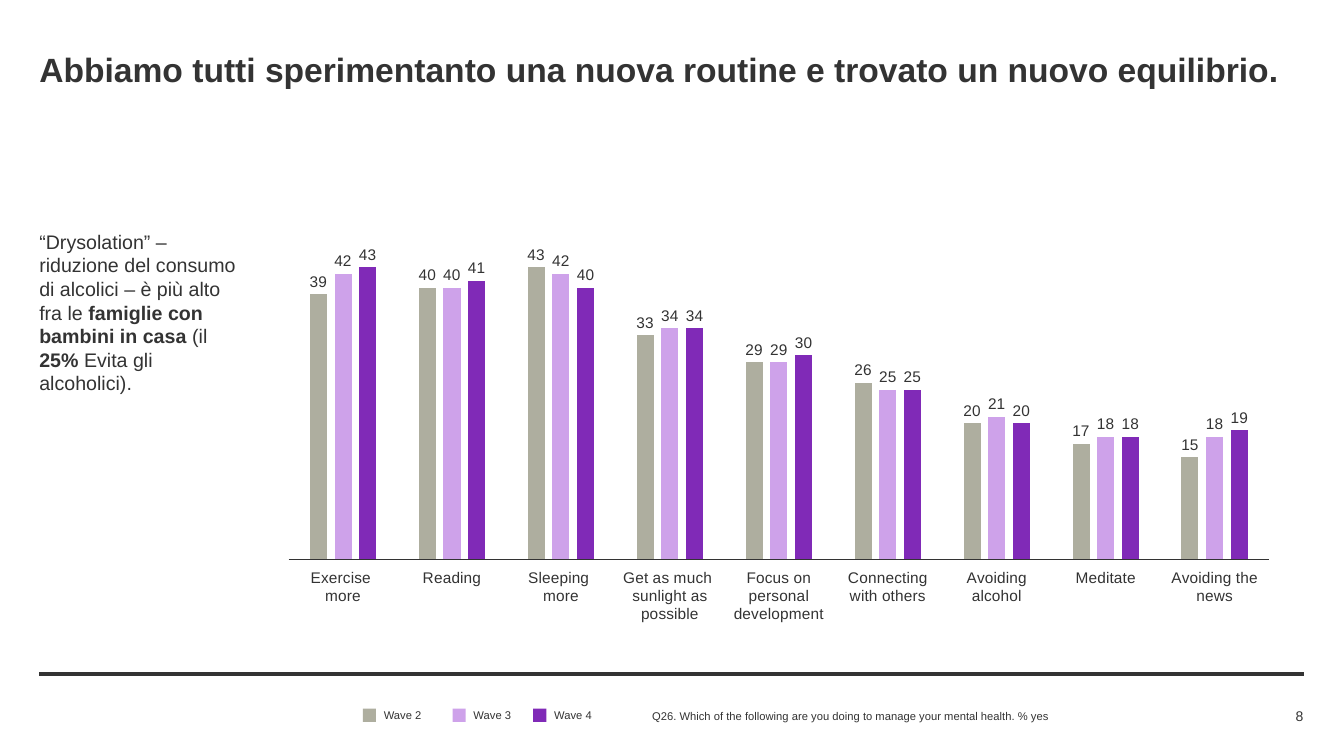
from lxml import etree
from pptx import Presentation
from pptx.chart.data import CategoryChartData
from pptx.dml.color import RGBColor
from pptx.enum.chart import XL_CHART_TYPE, XL_LABEL_POSITION, XL_TICK_LABEL_POSITION, XL_TICK_MARK
from pptx.enum.shapes import MSO_CONNECTOR, MSO_SHAPE
from pptx.enum.text import MSO_ANCHOR, PP_ALIGN
from pptx.oxml.ns import qn
from pptx.util import Pt

CLUSTERED = XL_CHART_TYPE.COLUMN_CLUSTERED
OUTSIDE_END = XL_LABEL_POSITION.OUTSIDE_END
LABELS_LOW = XL_TICK_LABEL_POSITION.LOW
NO_TICK = XL_TICK_MARK.NONE
STRAIGHT = MSO_CONNECTOR.STRAIGHT
RECTANGLE = MSO_SHAPE.RECTANGLE
TOP, MIDDLE = MSO_ANCHOR.TOP, MSO_ANCHOR.MIDDLE
LEFT, RIGHT = PP_ALIGN.LEFT, PP_ALIGN.RIGHT

FONT = "Arial"
INK = RGBColor(0x33, 0x33, 0x33)
SAGE = RGBColor(0xAE, 0xAE, 0x9F)
LILAC = RGBColor(0xCE, 0xA2, 0xEA)
VIOLET = RGBColor(0x80, 0x2A, 0xB7)

# Content
TITLE = "Abbiamo tutti sperimentanto una nuova routine e trovato un nuovo equilibrio."
COMMENT = [  # text, bold
    ("“Drysolation” – riduzione del consumo di alcolici – è più alto fra le ", False),
    ("famiglie con bambini in casa ", True),
    ("(il ", False),
    ("25%", True),
    (" Evita gli alcoholici).", False),
]
QUESTION = "Q26. Which of the following are you doing to manage your mental health. % yes"
PAGE = "8"
ACTIVITIES = [
    "Exercise \nmore", "Reading", "Sleeping \nmore",
    "Get as much \nsunlight as possible", "Focus on personal development",
    "Connecting with others", "Avoiding alcohol", "Meditate", "Avoiding the news",
]
WAVES = [  # name, colour, legend left, percentages
    ("Wave 2", SAGE, 259.2, (39, 40, 43, 33, 29, 26, 20, 17, 15)),
    ("Wave 3", LILAC, 323.3, (42, 40, 42, 34, 29, 25, 21, 18, 18)),
    ("Wave 4", VIOLET, 380.9, (43, 41, 40, 34, 30, 25, 20, 18, 19)),
]

# Layout in points
MARGIN, RIGHT_EDGE = 28.1, 931.7
RULE_Y = 481.7
CHART_BOX = (195.1, 118.1, 735.8, 352.8)
PLOT = {"x": 0.015, "y": 0.11, "w": 0.952, "h": 0.688}
FOOTER_Y, FOOTER_H = 503.3, 15.8
KEY_Y, KEY_SIZE, KEY_STEP = 506.2, 9.4, 14.9


def style(font, size, bold=False):
    for attribute, value in {"name": FONT, "size": Pt(size), "bold": bold}.items():
        setattr(font, attribute, value)
    font.color.rgb = INK


def add_text(slide, box, runs, size, anchor=TOP, align=LEFT):
    frame = slide.shapes.add_textbox(*map(Pt, box)).text_frame
    settings = {
        "word_wrap": True, "vertical_anchor": anchor,
        "margin_left": 0, "margin_top": 0, "margin_right": 0, "margin_bottom": 0,
    }
    for attribute, value in settings.items():
        setattr(frame, attribute, value)
    paragraph = frame.paragraphs[0]
    paragraph.alignment = align
    for text, bold in runs:
        run = paragraph.add_run()
        run.text = text
        style(run.font, size, bold)


def fix_plot_area(chart):
    area = chart._chartSpace.chart.plotArea
    for previous in area.findall(qn("c:layout")):
        area.remove(previous)
    layout = etree.Element(qn("c:layout"))
    manual = etree.SubElement(layout, qn("c:manualLayout"))
    values = {"layoutTarget": "inner", "xMode": "edge", "yMode": "edge", **PLOT}
    for tag, value in values.items():
        etree.SubElement(manual, qn("c:" + tag)).set("val", str(value))
    area.insert(0, layout)


def add_activity_chart(slide):
    data = CategoryChartData()
    data.categories = ACTIVITIES
    for name, _, _, percentages in WAVES:
        data.add_series(name, percentages)
    chart = slide.shapes.add_chart(CLUSTERED, *map(Pt, CHART_BOX), data).chart
    chart.has_legend = chart.has_title = False
    style(chart.font, 12)
    fix_plot_area(chart)

    plot = chart.plots[0]
    plot.vary_by_categories = False
    plot.gap_width, plot.overlap = 250, -45
    for series, (_, color, _, _) in zip(plot.series, WAVES):
        series.format.fill.solid()
        series.format.fill.fore_color.rgb = color
        labels = series.data_labels
        labels.show_value = True
        labels.position = OUTSIDE_END
        style(labels.font, 11)

    percent_axis = chart.value_axis
    percent_axis.minimum_scale, percent_axis.maximum_scale = 0, 50
    percent_axis.has_major_gridlines = percent_axis.visible = False

    activity_axis = chart.category_axis
    activity_axis.major_tick_mark = activity_axis.minor_tick_mark = NO_TICK
    activity_axis.tick_label_position = LABELS_LOW
    activity_axis.format.line.color.rgb = INK
    activity_axis.format.line.width = Pt(0.75)
    style(activity_axis.tick_labels.font, 11)


def main():
    deck = Presentation()
    deck.slide_width, deck.slide_height = Pt(960), Pt(540)
    slide = deck.slides.add_slide(deck.slide_layouts[6])

    # Footer rule
    rule = slide.shapes.add_connector(
        STRAIGHT, Pt(MARGIN), Pt(RULE_Y), Pt(RIGHT_EDGE), Pt(RULE_Y))
    rule.line.color.rgb = INK
    rule.line.width = Pt(3)
    etree.SubElement(rule._element.spPr, qn("a:effectLst"))

    # Title, chart and comment
    add_text(slide, (MARGIN, 34.6, RIGHT_EDGE - MARGIN, 31.7), [(TITLE, True)], 24)
    add_activity_chart(slide)
    add_text(slide, (MARGIN, 164.2, 144, 240.5), COMMENT, 14)

    # Legend
    for name, color, left, _ in WAVES:
        key = slide.shapes.add_shape(
            RECTANGLE, Pt(left), Pt(KEY_Y), Pt(KEY_SIZE), Pt(KEY_SIZE))
        key.shadow.inherit = False
        key.fill.solid()
        key.fill.fore_color.rgb = color
        key.line.fill.background()
        add_text(slide, (left + KEY_STEP, KEY_Y, 40, KEY_SIZE), [(name, False)], 8)

    # Question and page number
    add_text(slide, (465.8, FOOTER_Y, 381.6, FOOTER_H), [(QUESTION, False)], 8, MIDDLE)
    add_text(slide, (854.6, FOOTER_Y, 76.3, FOOTER_H), [(PAGE, False)], 10, MIDDLE, RIGHT)

    deck.save("out.pptx")


if __name__ == "__main__":
    main()
